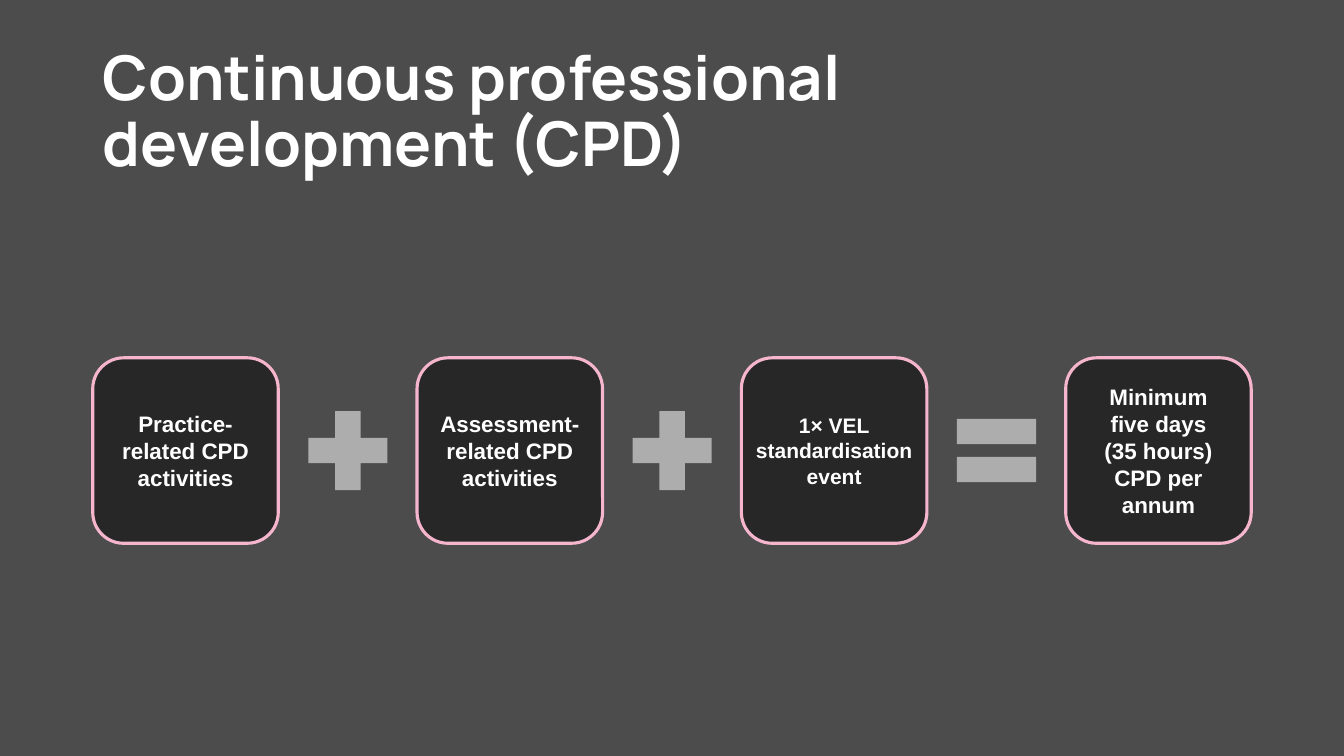
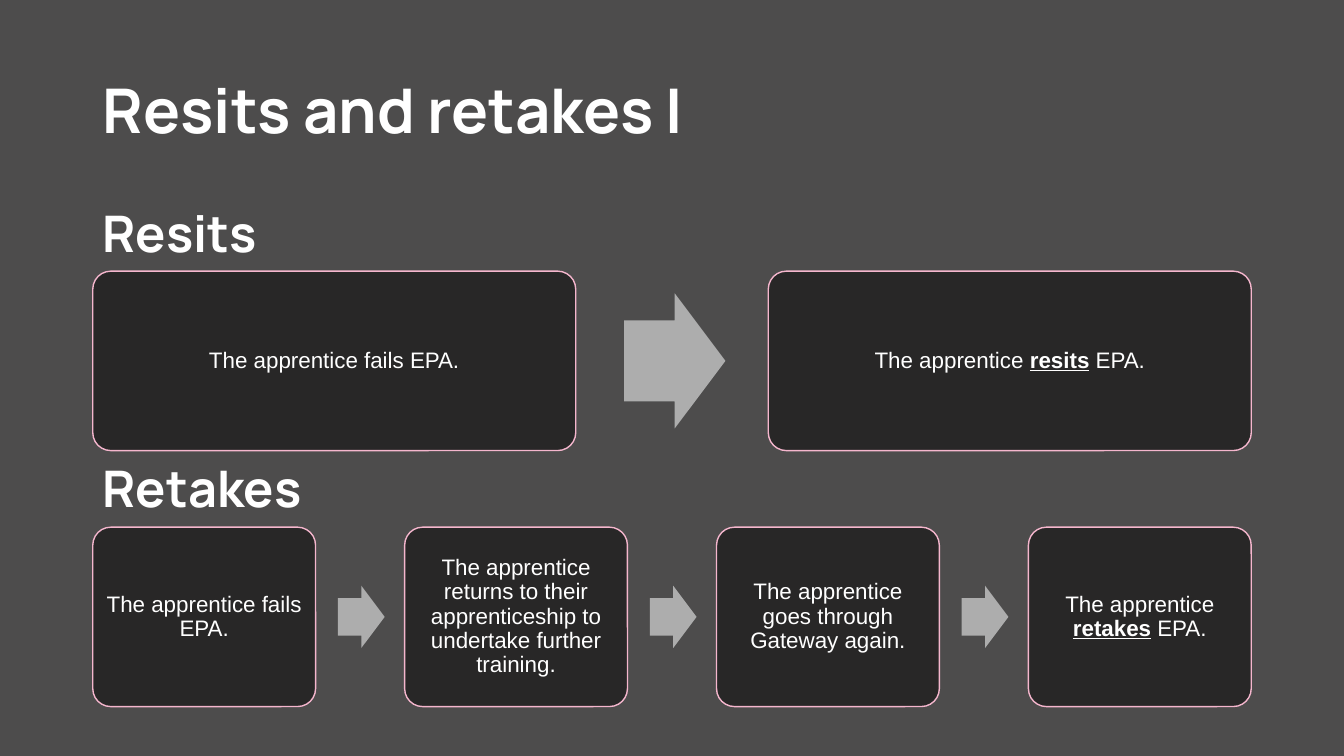
from pptx import Presentation
from pptx.dml.color import RGBColor
from pptx.enum.shapes import MSO_SHAPE as SHAPE
from pptx.enum.text import MSO_ANCHOR as ANCHOR, MSO_AUTO_SIZE as AUTO, PP_ALIGN as ALIGN
from pptx.util import Inches, Pt

GREY = RGBColor(0x4D, 0x4C, 0x4C)
DARK = RGBColor(0x28, 0x27, 0x27)
PINK = RGBColor(0xF5, 0xB6, 0xCD)
SILVER = RGBColor(0xAD, 0xAD, 0xAD)
WHITE = RGBColor(0xFF, 0xFF, 0xFF)
HEAD_FONT, BODY_FONT = "Manrope", "Arial"
LEFT, ROW_WIDTH, TEXT_WIDTH = 0.92, 11.49, 11.5


def write(tf, text, size=16, font=BODY_FONT, bold=False, align=ALIGN.CENTER,
          anchor=ANCHOR.MIDDLE, spacing=0.9, inset=None):
    """Fill a text frame: one paragraph a line, with _words_ bold and underlined."""
    tf.word_wrap = True
    tf.auto_size = AUTO.NONE
    tf.vertical_anchor = anchor
    if inset is not None:
        tf.margin_left = tf.margin_right = tf.margin_top = tf.margin_bottom = Inches(inset)
    for i, line in enumerate(text.split("\n")):
        p = tf.add_paragraph() if i else tf.paragraphs[0]
        p.alignment = align
        p.line_spacing = spacing
        for j, part in enumerate(line.split("_")):
            stressed = j % 2 == 1
            r = p.add_run()
            r.text = part
            r.font.name = font
            r.font.size = Pt(size)
            r.font.color.rgb = WHITE
            r.font.bold = bold or stressed
            r.font.underline = stressed


class Deck:
    """Holds the shared style and the current slide."""

    def __init__(self):
        self.prs = Presentation()
        self.prs.slide_width, self.prs.slide_height = Inches(13.33), Inches(7.5)
        fill = self.prs.slide_master.background.fill
        fill.solid()
        fill.fore_color.rgb = GREY
        self.layout = self.prs.slide_layouts.get_by_name("Title Only")
        self.s = None

    def slide(self, title):
        self.s = self.prs.slides.add_slide(self.layout)
        sp = self.s.shapes.title
        sp.left, sp.top = Inches(LEFT), Inches(0.4)
        sp.width, sp.height = Inches(TEXT_WIDTH), Inches(1.45)
        write(sp.text_frame, title, size=44, font=HEAD_FONT, bold=True, align=ALIGN.LEFT)

    def heading(self, text, top, height):
        sp = self.s.shapes.add_textbox(Inches(LEFT), Inches(top), Inches(TEXT_WIDTH), Inches(height))
        write(sp.text_frame, text, size=36, font=HEAD_FONT, bold=True,
              align=ALIGN.LEFT, anchor=ANCHOR.BOTTOM)

    def shape(self, kind, left, top, width, height, color, adjust=()):
        sp = self.s.shapes.add_shape(kind, Inches(left), Inches(top), Inches(width), Inches(height))
        sp.shadow.inherit = False
        sp.fill.solid()
        sp.fill.fore_color.rgb = color
        sp.line.fill.background()
        for i, value in enumerate(adjust):
            sp.adjustments[i] = value
        return sp

    def box(self, text, left, top, width, height, line=1, adjust=(), **fmt):
        sp = self.shape(SHAPE.ROUNDED_RECTANGLE, left, top, width, height, DARK, adjust)
        sp.line.color.rgb = PINK
        sp.line.width = Pt(line)
        write(sp.text_frame, text, **fmt)

    def sum_row(self, terms, operators, top, side):
        """Square boxes joined by operator signs; each term is (text, size)."""
        pitch = (ROW_WIDTH - side) / (len(terms) - 1)
        sign = 0.58 * side
        for i, (text, size) in enumerate(terms):
            self.box(text, LEFT + i * pitch, top, side, side, line=2.25,
                     size=size, bold=True, spacing=1.0, inset=0.02)
        for i, kind in enumerate(operators):
            self.shape(kind, LEFT + i * pitch + 1.085 * side, top + (side - sign) / 2,
                       sign, sign, SILVER)

    def process_row(self, steps, top, width, height=1.78):
        """Boxes spread over the row, with an arrow sized from the box width in each gap."""
        pitch = (ROW_WIDTH - width) / (len(steps) - 1)
        arrow_w, arrow_h = 0.21 * width, 0.28 * width
        for i, text in enumerate(steps):
            left = LEFT + i * pitch
            self.box(text, left, top, width, height, adjust=(0.1,), inset=0.07)
            if i < len(steps) - 1:
                self.shape(SHAPE.RIGHT_ARROW, left + 1.1 * width, top + (height - arrow_h) / 2,
                           arrow_w, arrow_h, SILVER, (0.6, 0.5))


def main():
    deck = Deck()

    deck.slide("Continuous professional development (CPD)")
    deck.sum_row(
        [("Practice-related CPD activities", 16),
         ("Assessment-related CPD activities", 16),
         ("1× VEL standardisation event", 15),
         ("Minimum\nfive days\n(35 hours)\nCPD per annum", 16)],
        [SHAPE.MATH_PLUS, SHAPE.MATH_PLUS, SHAPE.MATH_EQUAL], top=3.55, side=1.84)

    deck.slide("Resits and retakes I")
    deck.heading("Resits", top=1.85, height=0.81)
    deck.process_row(["The apprentice fails EPA.", "The apprentice _resits_ EPA."],
                     top=2.69, width=4.79)
    deck.heading("Retakes", top=4.52, height=0.67)
    deck.process_row(
        ["The apprentice fails EPA.",
         "The apprentice returns to their apprenticeship to undertake further training.",
         "The apprentice goes through Gateway again.",
         "The apprentice _retakes_ EPA."], top=5.23, width=2.21)

    deck.prs.save("out.pptx")


if __name__ == "__main__":
    main()
